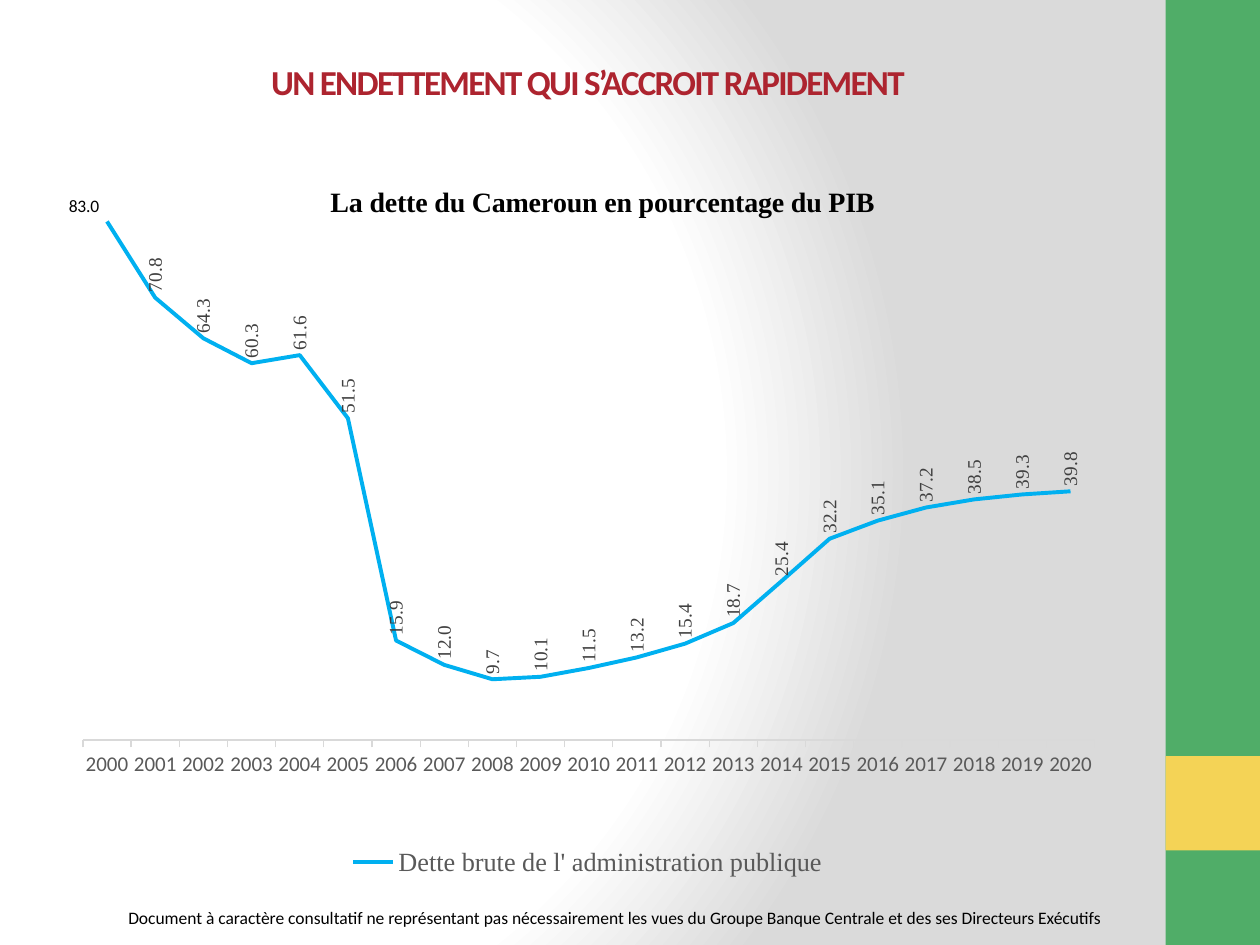
from copy import deepcopy

from pptx import Presentation
from pptx.chart.data import CategoryChartData
from pptx.dml.color import RGBColor
from pptx.enum.chart import XL_CHART_TYPE as ChartType, XL_LABEL_POSITION as LabelPos
from pptx.enum.chart import XL_LEGEND_POSITION as LegendPos, XL_TICK_MARK as Tick
from pptx.enum.shapes import MSO_SHAPE as Shape
from pptx.enum.text import MSO_ANCHOR as Anchor, PP_ALIGN as Align
from pptx.oxml import parse_xml
from pptx.oxml.ns import nsdecls, qn
from pptx.util import Inches, Pt

COLORS = {
    "white": "FFFFFF", "shade": "DADADA", "green": "50AD68", "yellow": "F4D356",
    "red": "AD242F", "black": "000000", "debt": "00B0F0", "axis": "D9D9D9",
    "muted": "595959", "label": "404040",
}
SANS, SERIF = "Calibri", "Times New Roman"
DEBT = [83, 70.8, 64.3, 60.3, 61.6, 51.5, 15.9, 12, 9.7, 10.1, 11.5,
        13.2, 15.4, 18.7, 25.4, 32.2, 35.1, 37.2, 38.5, 39.3, 39.8]


def color(name):
    return RGBColor.from_string(COLORS[name])


def set_font(font, size, shade, face=SANS, bold=False):
    font.size, font.name, font.bold = Pt(size), face, bold
    font.color.rgb = color(shade)


def place(parent, index, **values):
    for old in parent.findall(qn("c:layout")):
        parent.remove(old)
    fields = "".join(f'<c:{key} val="{value}"/>' for key, value in values.items())
    parent.insert(index, parse_xml(
        f'<c:layout {nsdecls("c")}><c:manualLayout>{fields}</c:manualLayout></c:layout>'))


class SlideBuilder:
    def __init__(self, slide):
        self.slide = slide

    def background(self):
        self.slide.background.fill.gradient()
        gradient = self.slide.element.find(".//" + qn("a:gradFill"))
        stops = "".join(
            f'<a:gs pos="{pos}"><a:srgbClr val="{COLORS[name]}"/></a:gs>'
            for pos, name in ((0, "white"), (75000, "white"), (100000, "shade")))
        gradient.getparent().replace(gradient, parse_xml(
            f'<a:gradFill {nsdecls("a")} rotWithShape="1"><a:gsLst>{stops}</a:gsLst>'
            '<a:path path="circle"><a:fillToRect l="20000" t="50000" r="100000" b="50000"/>'
            '</a:path></a:gradFill>'))

    def band(self, top, height, shade):
        band = self.slide.shapes.add_shape(
            Shape.RECTANGLE, Inches(9.25), Inches(top), Inches(0.75), Inches(height))
        band.shadow.inherit = False
        band.fill.solid()
        band.fill.fore_color.rgb = color(shade)
        band.line.fill.background()

    def text(self, words, box, size, shade, bold=False, align=Align.LEFT,
             anchor=Anchor.TOP, spacing=0):
        frame = self.slide.shapes.add_textbox(*map(Inches, box)).text_frame
        frame.word_wrap = True
        frame.vertical_anchor = anchor
        frame.text = words
        paragraph = frame.paragraphs[0]
        paragraph.alignment = align
        run = paragraph.runs[0]
        set_font(run.font, size, shade, bold=bold)
        if spacing:
            run.font._element.set("spc", str(spacing * 100))

    def line_chart(self, heading, name, years, values, box):
        data = CategoryChartData(number_format="#,##0.0")
        data.categories = years
        data.add_series(name, values)
        chart = self.slide.shapes.add_chart(ChartType.LINE, *map(Inches, box), data).chart
        set_font(chart.font, 10, "black")

        title = chart.chart_title
        title.text_frame.text = heading
        set_font(title.text_frame.paragraphs[0].runs[0].font, 16, "black", SERIF, True)
        place(title._element, 1, xMode="edge", yMode="edge", x=0.25, y=0.03)

        chart.has_legend = True
        chart.legend.position = LegendPos.BOTTOM
        chart.legend.include_in_layout = False
        set_font(chart.legend.font, 15, "muted", SERIF)

        year_axis, value_axis = chart.category_axis, chart.value_axis
        year_axis.major_tick_mark = Tick.OUTSIDE
        year_axis.format.line.color.rgb = color("axis")
        year_axis.format.line.width = Pt(0.75)
        set_font(year_axis.tick_labels.font, 12, "muted")
        value_axis.minimum_scale, value_axis.maximum_scale = 0, 90
        value_axis.has_major_gridlines = False
        value_axis.visible = False

        plot = chart.plots[0]
        plot.vary_by_categories = False
        series = plot.series[0]
        series.smooth = False
        series.format.line.color.rgb = color("debt")
        series.format.line.width = Pt(2.25)
        self.value_labels(series)
        place(chart._chartSpace.find(".//" + qn("c:plotArea")), 0,
              layoutTarget="inner", xMode="edge", yMode="edge",
              x=0.019, y=0.028, w=0.964, h=0.776)

    def value_labels(self, series):
        labels = series.data_labels
        labels.show_value = True
        labels.position = LabelPos.ABOVE
        labels.number_format = "#,##0.0"
        labels.number_format_is_linked = False
        set_font(labels.font, 11, "label", SERIF)
        group = labels._element
        body = group.find(qn("c:txPr")).find(qn("a:bodyPr"))
        body.set("rot", "-5400000")
        body.set("vert", "horz")

        series.points[0].data_label.position = LabelPos.ABOVE
        first = group.find(qn("c:dLbl"))
        place(first, 1, x=-0.022, y=0)
        for index, tag in enumerate(("c:numFmt", "c:txPr"), 2):
            first.insert(index, deepcopy(group.find(qn(tag))))


def main():
    deck = Presentation()
    deck.slide_width, deck.slide_height = Inches(10), Inches(7.5)
    page = SlideBuilder(deck.slides.add_slide(deck.slide_layouts[6]))
    page.background()
    page.band(0, 7.5, "green")
    page.band(6, 0.75, "yellow")
    page.text("Document à caractère consultatif ne représentant pas nécessairement les vues "
              "du Groupe Banque Centrale et des ses Directeurs Exécutifs",
              (0.92, 7.15, 8.83, 0.27), 10, "black")
    page.text("UN ENDETTEMENT QUI S’ACCROIT RAPIDEMENT", (0.5, 0.3, 8.33, 0.7), 20, "red",
              bold=True, align=Align.CENTER, anchor=Anchor.MIDDLE, spacing=-1)
    page.line_chart("La dette du Cameroun en pourcentage du PIB",
                    "Dette brute de l' administration publique",
                    [str(year) for year in range(2000, 2021)], DEBT,
                    (0.5, 1.25, 8.33, 5.75))
    deck.save("out.pptx")


if __name__ == "__main__":
    main()
